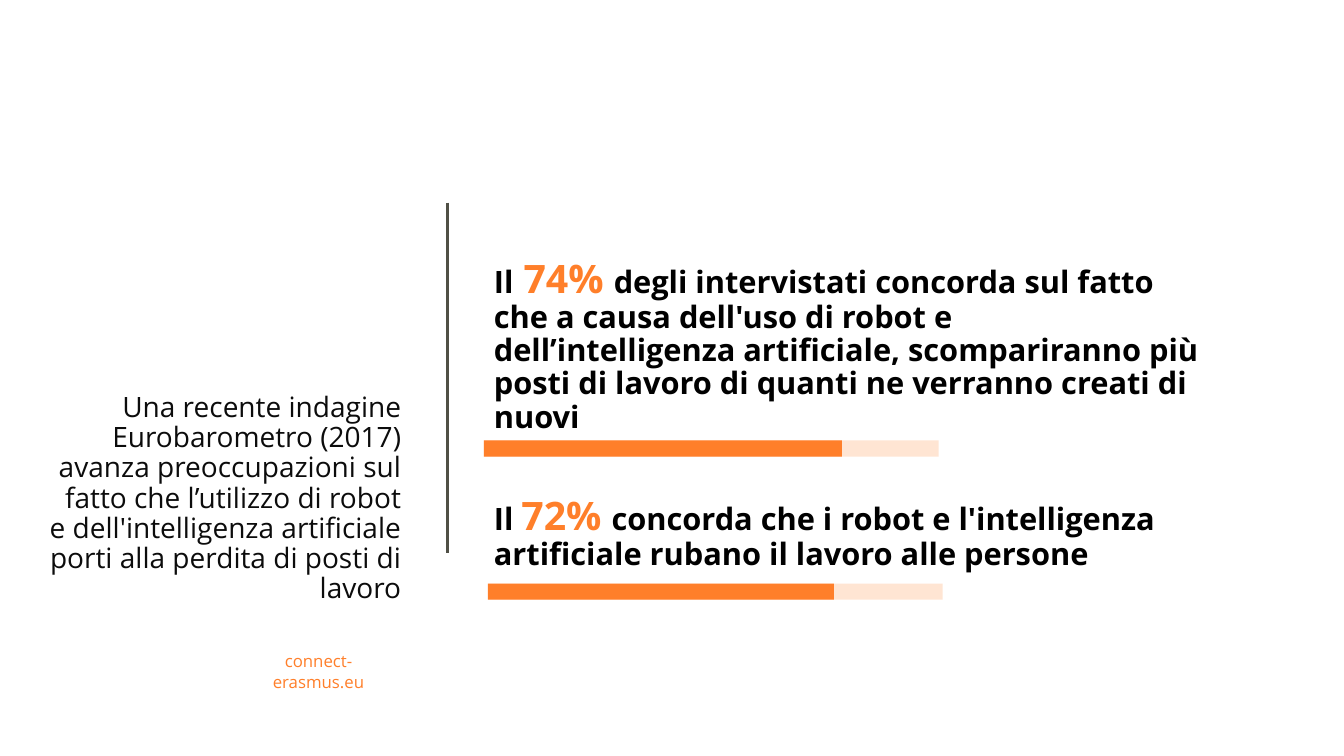
from pptx import Presentation
from pptx.dml.color import RGBColor
from pptx.enum.shapes import MSO_CONNECTOR, MSO_SHAPE
from pptx.enum.text import MSO_ANCHOR, MSO_AUTO_SIZE, PP_ALIGN
from pptx.oxml.ns import qn
from pptx.util import Inches, Pt
from lxml.etree import SubElement

FONT = "Open Sans"
ORANGE, PEACH, BLACK, INK, GREY = "FF7F2A", "FFE5D3", "000000", "0C0C0C", "505046"


def color(code):
    return RGBColor.from_string(code)


def place(shape, box):
    shape.left, shape.top, shape.width, shape.height = map(Inches, box)


def write(frame, paras, size=20, fill=BLACK, bold=False, align=PP_ALIGN.LEFT,
          anchor=MSO_ANCHOR.MIDDLE, line=1.0, gap=0, foot=0.05):
    """Fill a frame; each paragraph is a list of (text, own format) pairs."""
    frame.word_wrap = True
    frame.auto_size = MSO_AUTO_SIZE.NONE
    frame.vertical_anchor = anchor
    frame.margin_left = frame.margin_right = Inches(0.1)
    frame.margin_top, frame.margin_bottom = Inches(0.05), Inches(foot)
    for i, parts in enumerate(paras):
        para = frame.add_paragraph() if i else frame.paragraphs[0]
        para.alignment, para.line_spacing = align, line
        para.space_before = Pt(gap if i else 0)
        for text, own in parts:
            run = para.add_run()
            run.text = text
            font = run.font
            font.name, font.bold = FONT, bold
            font.size = Pt(own.get("size", size))
            font.color.rgb = color(own.get("fill", fill))


def add_text(slide, box, paras, **form):
    shape = slide.shapes.add_textbox(*map(Inches, box))
    write(shape.text_frame, paras, **form)


def add_title(slide, box):
    title = slide.shapes.title
    place(title, box)
    text = ("Una recente indagine Eurobarometro (2017) avanza preoccupazioni sul "
            "fatto che l’utilizzo di robot e dell'intelligenza artificiale porti "
            "alla perdita di posti di lavoro")
    write(title.text_frame, [[(text, {})]], fill=INK, align=PP_ALIGN.RIGHT,
          anchor=MSO_ANCHOR.BOTTOM, line=0.9)


def add_rule(slide, x, top, bottom):
    rule = slide.shapes.add_connector(
        MSO_CONNECTOR.STRAIGHT, *map(Inches, (x, top, x, bottom)))
    rule.line.color.rgb = color(GREY)
    rule.line.width = Pt(2)
    SubElement(rule._element.spPr, qn("a:effectLst"))


def add_bar(slide, box, part):
    """Draw a pale track with an orange bar of width part on it."""
    left, top, width, height = box
    for wide, fill in ((width, PEACH), (part, ORANGE)):
        bar = slide.shapes.add_shape(
            MSO_SHAPE.RECTANGLE, *map(Inches, (left, top, wide, height)))
        bar.shadow.inherit = False
        bar.fill.solid()
        bar.fill.fore_color.rgb = color(fill)
        bar.line.fill.background()


def add_facts(slide, box):
    left, top, width, height = box
    big = {"size": 28, "fill": ORANGE}
    facts = [
        [("Il", {}), (" 74% ", big),
         ("degli intervistati concorda sul fatto che a causa dell'uso di robot e "
          "dell’intelligenza artificiale, scompariranno più posti di lavoro di "
          "quanti ne verranno creati di nuovi", {})],
        [("Il ", {}), ("72% ", big),
         ("concorda che i robot e l'intelligenza artificiale rubano il lavoro "
          "alle persone", {})],
    ]
    add_text(slide, box, facts, size=22, bold=True, line=0.9, gap=44, foot=0.86)
    for dx, dy, part in ((0.04, 3.78, 3.43), (0, 2.36, 3.55)):
        add_bar(slide, (left + dx, top + dy, 4.51, 0.16), part)


def main():
    deck = Presentation()
    deck.slide_width, deck.slide_height = Inches(13.33), Inches(7.5)
    slide = deck.slides.add_slide(deck.slide_layouts[5])
    add_text(slide, (2.28, 6.51, 1.76, 0.3), [[("connect-erasmus.eu", {})]],
             size=12, fill=ORANGE, align=PP_ALIGN.CENTER)
    add_title(slide, (0.37, 1.45, 3.71, 4.6))
    add_rule(slide, 4.44, 2.01, 5.49)
    add_facts(slide, (4.8, 2.01, 7.22, 5.04))
    deck.save("out.pptx")


if __name__ == "__main__":
    main()
